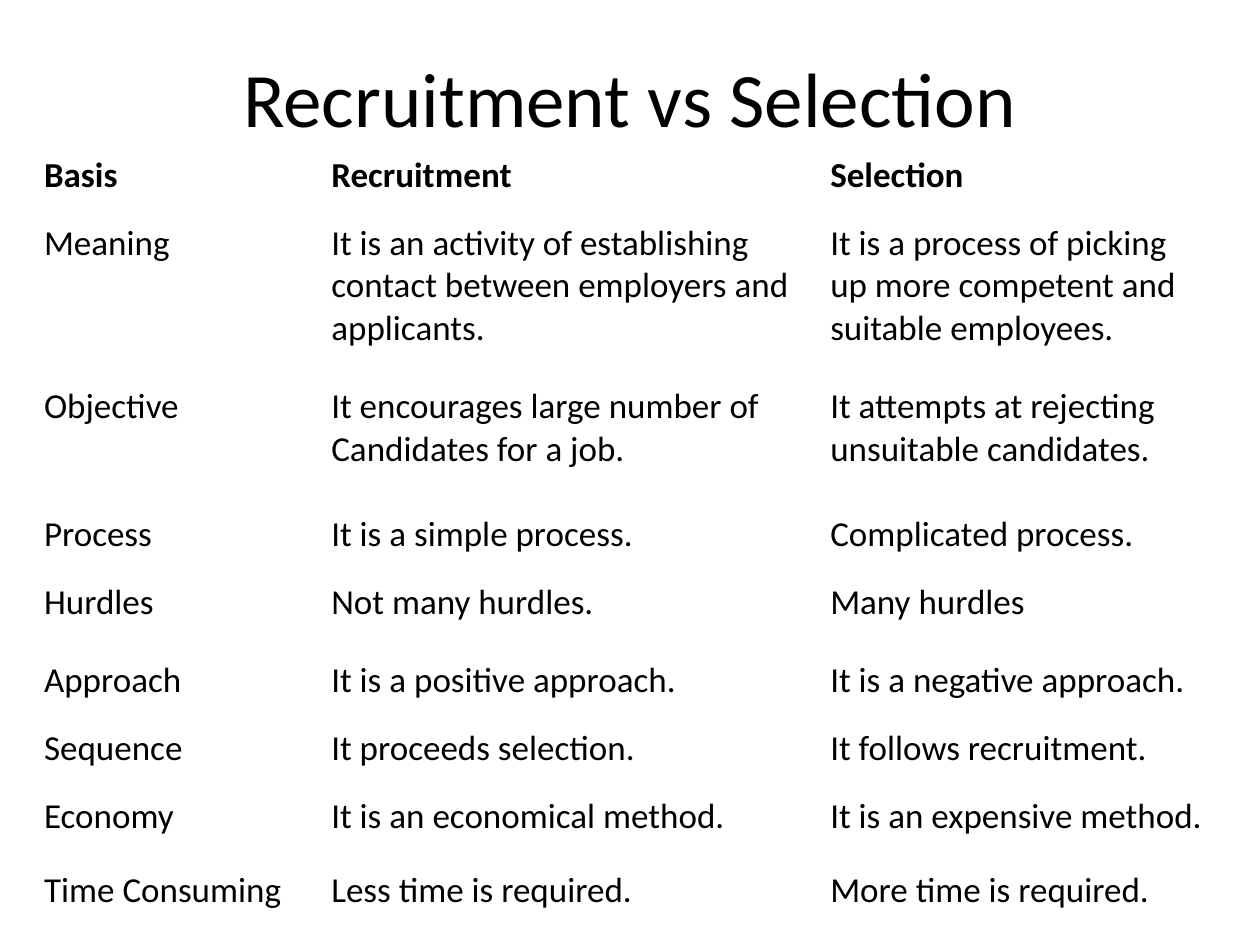
from pptx import Presentation
from pptx.dml.color import RGBColor
from pptx.enum.text import MSO_ANCHOR, PP_ALIGN
from pptx.util import Inches, Pt

CENTER = PP_ALIGN.CENTER
MIDDLE = MSO_ANCHOR.MIDDLE
BLACK = RGBColor(0x00, 0x00, 0x00)
FONT = "Calibri"
CELL_MARGIN = Inches(0.07)

COLUMN_WIDTHS = (2.28, 3.96, 3.12)
COMPARISON = (
    (0.54, "Basis", "Recruitment", "Selection"),
    (1.3, "Meaning",
     "It is an activity of establishing contact between employers and applicants.",
     "It is a process of picking up more competent and suitable employees."),
    (1.01, "Objective",
     "It encourages large number of Candidates for a job.",
     "It attempts at rejecting unsuitable candidates."),
    (0.54, "Process", "It is a simple process.", "Complicated process."),
    (0.62, "Hurdles", "Not many hurdles.", "Many hurdles"),
    (0.54, "Approach", "It is a positive approach.", "It is a negative approach."),
    (0.54, "Sequence", "It proceeds selection.", "It follows recruitment."),
    (0.59, "Economy", "It is an economical method.", "It is an expensive method."),
    (0.54, "Time Consuming", "Less time is required.", "More time is required."),
)


def write_text(frame, text, size, bold=False):
    """Put one styled paragraph in a text frame and return it."""
    para = frame.paragraphs[0]
    para.text = text
    para.font.name = FONT
    para.font.size = Pt(size)
    para.font.bold = bold
    para.font.color.rgb = BLACK
    return para


def add_title(page, left, top, width, height):
    """Place the centred slide title in the given box."""
    box = page.shapes.add_textbox(
        Inches(left), Inches(top), Inches(width), Inches(height))
    frame = box.text_frame
    frame.word_wrap = True
    frame.vertical_anchor = MIDDLE
    write_text(frame, "Recruitment vs Selection", 44).alignment = CENTER


def add_comparison(page, left, top, width, height):
    """Place the unfilled comparison table in the given box."""
    table = page.shapes.add_table(
        len(COMPARISON), len(COLUMN_WIDTHS),
        Inches(left), Inches(top), Inches(width), Inches(height)).table
    table.first_row = False
    table.horz_banding = False
    for column, column_width in zip(table.columns, COLUMN_WIDTHS):
        column.width = Inches(column_width)
    for index, (row_height, *texts) in enumerate(COMPARISON):
        row = table.rows[index]
        row.height = Inches(row_height)
        for cell, text in zip(row.cells, texts):
            cell.fill.background()
            cell.margin_left = cell.margin_right = CELL_MARGIN
            cell.margin_top = cell.margin_bottom = CELL_MARGIN
            write_text(cell.text_frame, text, 20, bold=index == 0)


def main():
    """Build and save the deck."""
    deck = Presentation()
    deck.slide_width = Inches(10)
    deck.slide_height = Inches(7.5)
    page = deck.slides.add_slide(deck.slide_layouts[6])
    add_title(page, 0.5, 0.3, 9, 0.93)
    add_comparison(page, 0.28, 1.15, 9.36, 6.22)
    deck.save("out.pptx")


if __name__ == "__main__":
    main()
